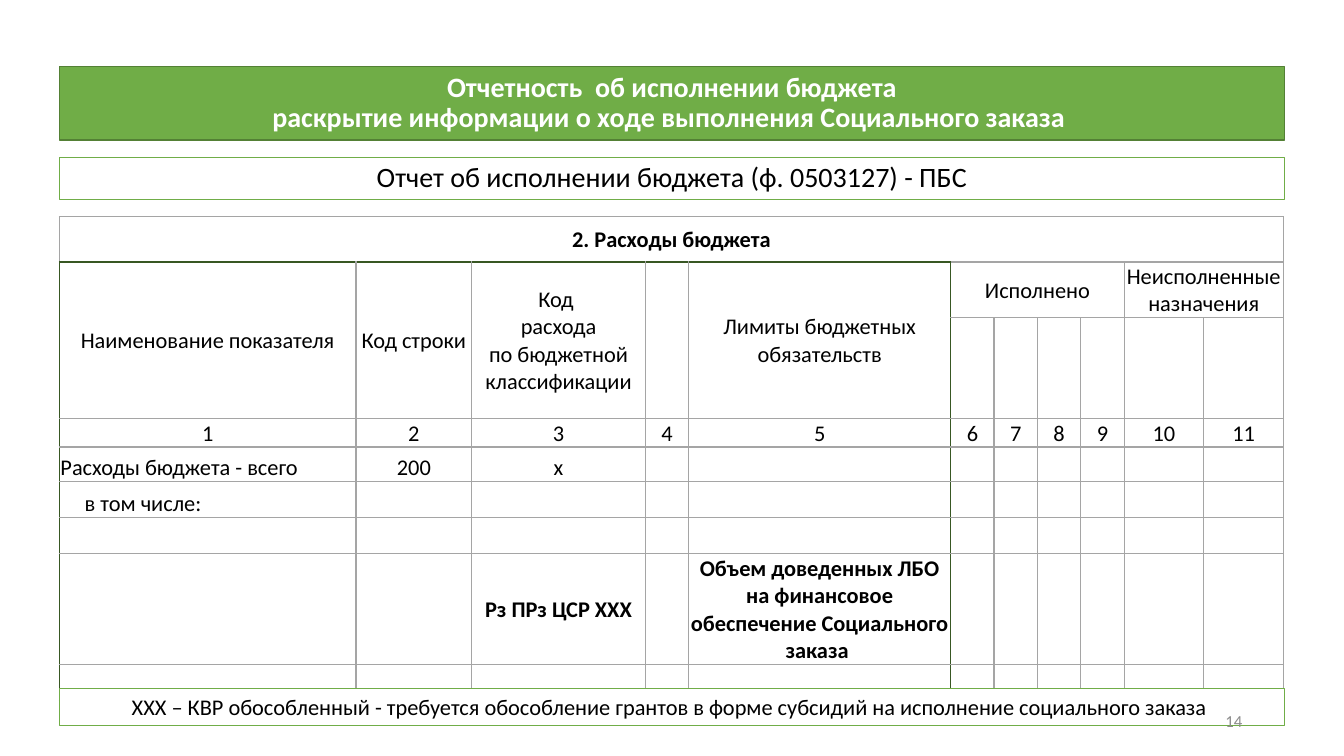
"""Build the slide on budget execution reporting for the Social Order."""
from lxml import etree
from pptx import Presentation
from pptx.dml.color import RGBColor
from pptx.enum.shapes import MSO_SHAPE
from pptx.enum.text import MSO_ANCHOR as ANCHOR, PP_ALIGN as ALIGN
from pptx.oxml.ns import qn
from pptx.util import Inches, Pt

GREEN, DARK, GREY = "70AD47", "385723", "A5A5A5"
LEFT, WIDTH = 0.59, 12.15


def rgb(color):
    return RGBColor.from_string(color)


def write(tf, text, size, color="000000", bold=False, align=ALIGN.CENTER, anchor=ANCHOR.MIDDLE):
    tf.word_wrap = True
    tf.vertical_anchor = anchor
    p = tf.paragraphs[0]
    p.alignment = align
    for i, line in enumerate(text.split("\n")):
        if i:
            p.add_line_break()
        r = p.add_run()
        r.text = line
        r.font.name = "Calibri"
        r.font.size = Pt(size)
        r.font.bold = bold
        r.font.color.rgb = rgb(color)
    return p


prs = Presentation()
prs.slide_width, prs.slide_height = Inches(13.33), Inches(7.5)
s = prs.slides.add_slide(prs.slide_layouts[5])

title = s.shapes.title
title.left, title.top = Inches(LEFT), Inches(0.66)
title.width, title.height = Inches(WIDTH), Inches(0.73)
title.fill.solid()
title.fill.fore_color.rgb = rgb(GREEN)
title.line.color.rgb = rgb("538035")
title.line.width = Pt(1)
p = write(title.text_frame, "Отчетность  об исполнении бюджета\n"
          "раскрытие информации о ходе выполнения Социального заказа ", 20, "FFFFFF", True)
p.line_spacing = 0.9

column_widths = [2.94, 1.15, 1.72, 0.43, 2.6] + [0.43] * 4 + [0.79] * 2
row_heights = [0.45, 0.51, 1, 0.27, 0.34] + [0.36] * 4
last_row = len(row_heights) - 1
frame = s.shapes.add_table(len(row_heights), len(column_widths), Inches(LEFT), Inches(2.15),
                           Inches(WIDTH), Inches(sum(row_heights)))
table = frame.table
table.first_row = table.horz_banding = False
for column, width in zip(table.columns, column_widths):
    column.width = Inches(width)
for row, height in zip(table.rows, row_heights):
    row.height = Inches(height)

texts = {
    (0, 0): "2. Расходы бюджета",
    (1, 0): "Наименование показателя",
    (1, 1): "Код строки",
    (1, 2): "Код \nрасхода\nпо бюджетной классификации",
    (1, 4): "Лимиты бюджетных обязательств",
    (1, 5): "Исполнено",
    (1, 9): "Неисполненные\nназначения",
    (4, 0): "Расходы бюджета - всего",
    (4, 1): "200",
    (4, 2): "х",
    (5, 0): "в том числе:",
    (7, 2): "Рз ПРз ЦСР ХХХ",
    (7, 4): "Объем доведенных ЛБО на финансовое обеспечение Социального заказа ",
}
texts.update({(3, c): str(c + 1) for c in range(len(column_widths))})
anchors = {3: ANCHOR.TOP, 4: ANCHOR.BOTTOM, 5: ANCHOR.BOTTOM}

for r, c in [(r, c) for r in range(len(row_heights)) for c in range(len(column_widths))]:
    cell = table.cell(r, c)
    cell.margin_left = Inches(0.25 if (r, c) == (5, 0) else 0.01)
    cell.margin_right = cell.margin_top = Inches(0.01)
    cell.margin_bottom = 0
    cell.vertical_anchor = anchors.get(r, ANCHOR.MIDDLE)
    if (r, c) in texts:
        write(cell.text_frame, texts[r, c], 16, bold=r in (0, 7),
              align=ALIGN.LEFT if c == 0 and r in (4, 5) else ALIGN.CENTER,
              anchor=cell.vertical_anchor)
    else:
        cell.text_frame.paragraphs[0].font.size = Pt(16)
    dark_sides = {
        "lnL": r > 0 and c in (0, 5),
        "lnR": r > 0 and c == 4,
        "lnT": r == 1 and c < 5,
        "lnB": r in (0, last_row) and c < 5,
    }
    tcPr = cell._tc.get_or_add_tcPr()
    for side, dark in dark_sides.items():
        ln = etree.SubElement(tcPr, qn(f"a:{side}"), w=str(Pt(1)))
        fill = etree.SubElement(ln, qn("a:solidFill"))
        etree.SubElement(fill, qn("a:srgbClr"), val=DARK if dark else GREY)
    cell.fill.background()

merges = [(0, 0, 0, 10), (1, 5, 1, 8), (1, 9, 1, 10)] + [(1, c, 2, c) for c in range(5)]
for top, left, bottom, right in merges:
    table.cell(top, left).merge(table.cell(bottom, right))

boxes = [
    (1.56, 0.42, "Отчет об исполнении бюджета (ф. 0503127) - ПБС", 20, 0.9, ANCHOR.MIDDLE),
    (6.83, 0.37, "ХХХ – КВР обособленный - требуется обособление грантов в форме субсидий "
     "на исполнение социального заказа ", 16, 1.0, ANCHOR.TOP),
]
for top, height, text, size, spacing, anchor in boxes:
    sp = s.shapes.add_shape(MSO_SHAPE.RECTANGLE, Inches(LEFT), Inches(top),
                            Inches(WIDTH), Inches(height))
    sp.shadow.inherit = False
    sp.fill.solid()
    sp.fill.fore_color.rgb = rgb("FFFFFF")
    sp.line.color.rgb = rgb(GREEN)
    sp.line.width = Pt(1)
    p = write(sp.text_frame, text, size, anchor=anchor)
    p.line_spacing = spacing

page_number = s.shapes.add_textbox(Inches(9.42), Inches(6.95), Inches(3), Inches(0.4))
write(page_number.text_frame, "14", 12, "8C8C8C", align=ALIGN.RIGHT)

prs.save("out.pptx")
